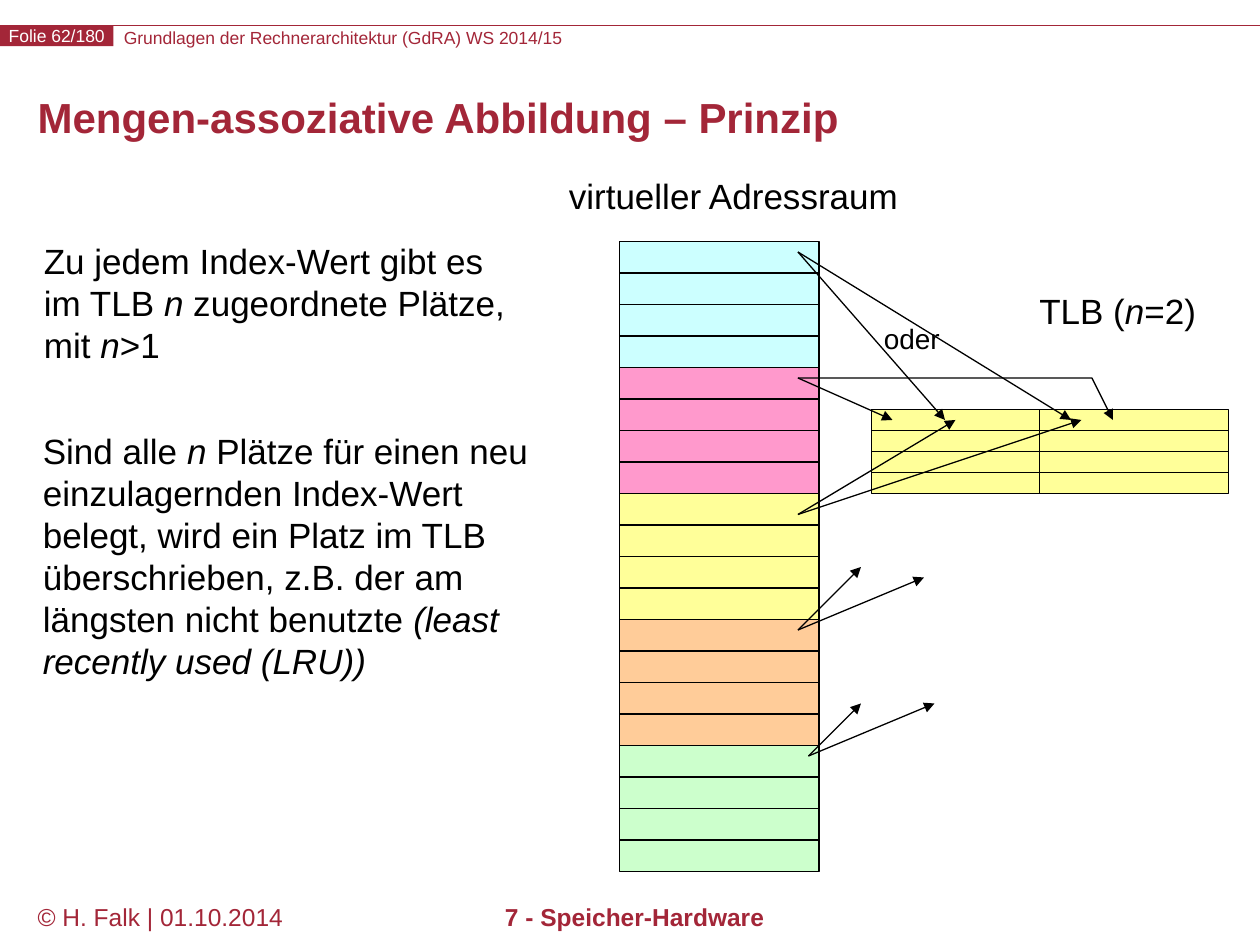
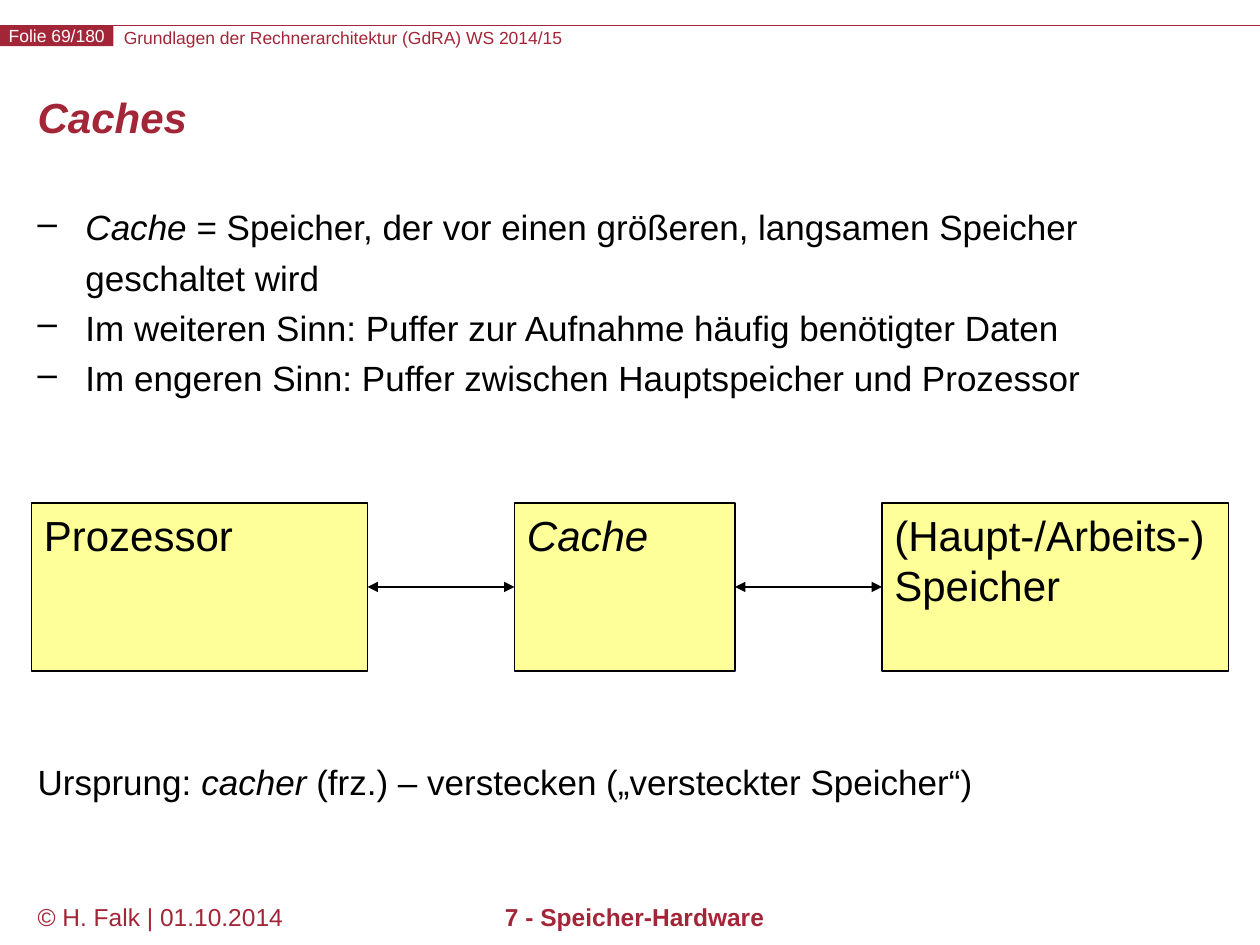
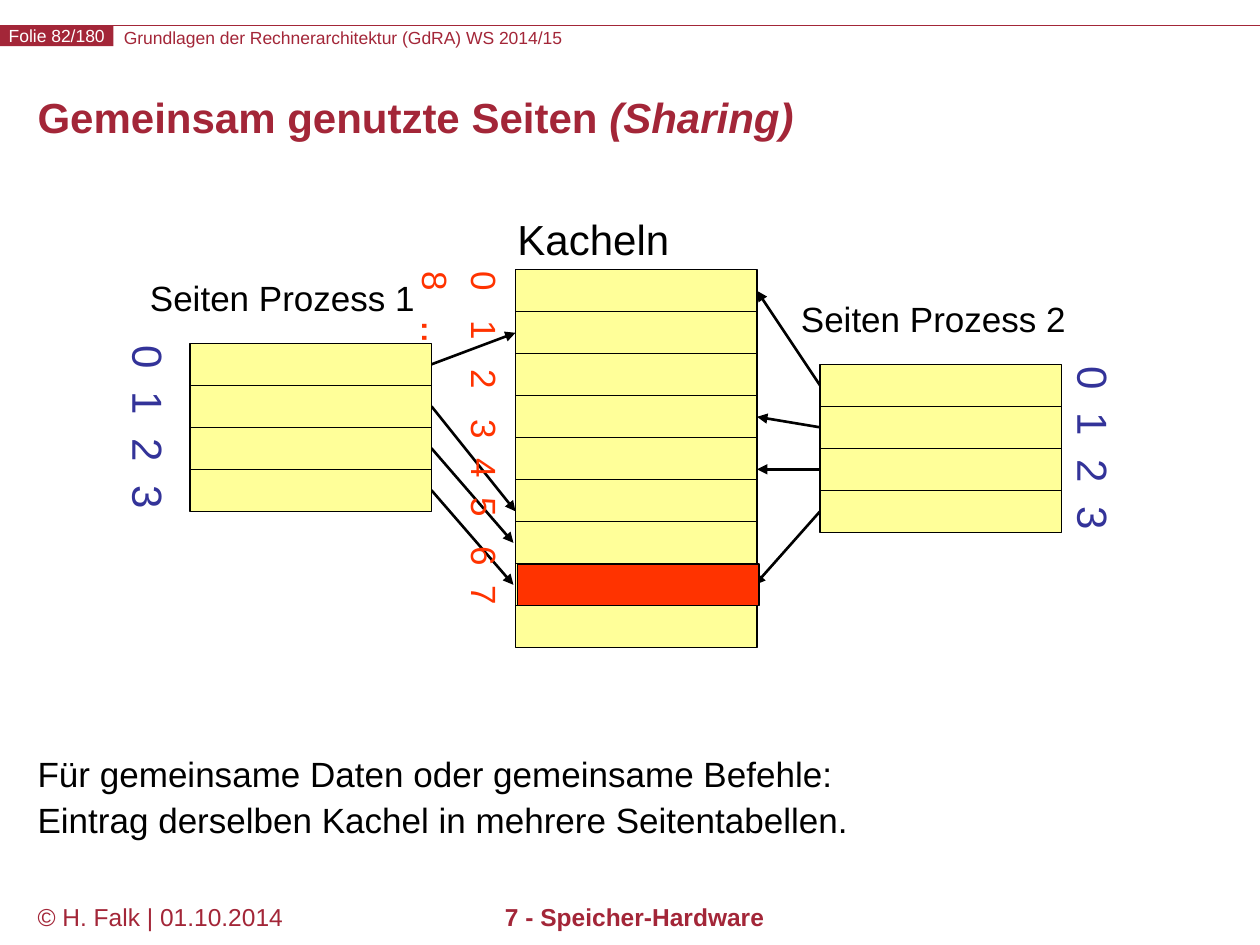
from itertools import accumulate

from lxml import etree
from pptx import Presentation
from pptx.dml.color import RGBColor
from pptx.enum.shapes import MSO_CONNECTOR, MSO_SHAPE
from pptx.enum.text import MSO_ANCHOR, PP_ALIGN
from pptx.oxml.ns import qn
from pptx.util import Inches, Pt

RECTANGLE = MSO_SHAPE.RECTANGLE
STRAIGHT = MSO_CONNECTOR.STRAIGHT
LEFT, CENTER = PP_ALIGN.LEFT, PP_ALIGN.CENTER
TOP, MIDDLE = MSO_ANCHOR.TOP, MSO_ANCHOR.MIDDLE
LEFT_SIDE, RIGHT_SIDE = 1, 3

FONT = "Arial"
COLUMNS, ROWS = 120, 90
UNIT = Inches(10) / COLUMNS
COLORS = {
    "accent": "A32638",
    "white": "FFFFFF",
    "black": "000000",
    "cyan": "CCFFFF",
    "pink": "FF99CC",
    "yellow": "FFFF99",
    "orange": "FFCC99",
    "green": "CCFFCC",
    "red": "FF3300",
    "blue": "333399",
}


def grid(*lengths):
    return [round(length * UNIT) for length in lengths]


def rgb(color):
    return RGBColor.from_string(COLORS[color])


def write_run(paragraph, text, size, color, bold=False, italic=False):
    run = paragraph.add_run()
    run.text = text
    font = run.font
    font.name, font.size, font.bold, font.italic = FONT, Pt(size), bold, italic
    font.color.rgb = rgb(color)


def write(frame, text, size, color="black", bold=False, align=LEFT,
          anchor=TOP, spacing=None, bullet=None, tabs=(), inset=True):
    frame.word_wrap = True
    frame.vertical_anchor = anchor
    if not inset:
        frame.margin_left = frame.margin_right = 0
        frame.margin_top = frame.margin_bottom = 0
    for number, line in enumerate(text.split("\n")):
        paragraph = frame.add_paragraph() if number else frame.paragraphs[0]
        paragraph.alignment = align
        properties = paragraph._p.get_or_add_pPr()
        if bullet:
            properties.set("marL", str(Inches(0.38)))
            properties.set("indent", str(-Inches(0.38)))
            etree.SubElement(properties, qn("a:buChar")).set("char", bullet)
        if tabs:
            stops = etree.SubElement(properties, qn("a:tabLst"))
            for position in tabs:
                stop = etree.SubElement(stops, qn("a:tab"))
                stop.set("pos", str(Inches(position)))
                stop.set("algn", "l")
        if spacing:
            paragraph.line_spacing = spacing
        for part, piece in enumerate(line.split("_")):
            if piece:
                write_run(paragraph, piece, size, color, bold, part % 2 == 1)
    return frame


def label(slide, area, text, size=20, rotation=0, **style):
    box = slide.shapes.add_textbox(*grid(*area))
    box.rotation = rotation
    return write(box.text_frame, text, size, **style)


def rectangle(slide, area, fill, outline="black"):
    block = slide.shapes.add_shape(RECTANGLE, *grid(*area))
    block.shadow.inherit = False
    block.fill.solid()
    block.fill.fore_color.rgb = rgb(fill)
    if outline:
        block.line.color.rgb = rgb(outline)
        block.line.width = Pt(0.75)
    else:
        block.line.fill.background()
    return block


def add_heads(shape, *ends):
    outline = shape.line._get_or_add_ln()
    for end in ends:
        etree.SubElement(outline, qn(f"a:{end}")).set("type", "triangle")


def line(slide, start, end, width=0.75, color="black", heads=()):
    stroke = slide.shapes.add_connector(STRAIGHT, *grid(*start, *end))
    stroke.line.color.rgb = rgb(color)
    stroke.line.width = Pt(width)
    add_heads(stroke, *heads)
    etree.SubElement(stroke._element.spPr, qn("a:effectLst"))
    return stroke


def arrow(slide, start, end, width=0.75):
    return line(slide, start, end, width, heads=("tailEnd",))


def bent_arrow(slide, start, *points):
    builder = slide.shapes.build_freeform(*grid(*start))
    builder.add_line_segments([grid(*point) for point in points], close=False)
    bend = builder.convert_to_shape()
    bend.shadow.inherit = False
    bend.fill.background()
    bend.line.color.rgb = rgb("black")
    bend.line.width = Pt(0.75)
    add_heads(bend, "tailEnd")


def memory(slide, left, top, width, cells, cell_height, fill="yellow"):
    rectangle(slide, (left, top, width, cells * cell_height), fill)
    for cell in range(1, cells):
        level = top + cell * cell_height
        line(slide, (left, level), (left + width, level))


def start_slide(deck, number, title):
    slide = deck.slides.add_slide(deck.slide_layouts[6])
    line(slide, (0, 2.4), (COLUMNS, 2.4), color="accent")
    label(slide, (11.8, 2.6, 79, 2), "Grundlagen der Rechnerarchitektur (GdRA) WS 2014/15",
          10, color="accent", inset=False)
    tag = rectangle(slide, (0, 2.4, 10.8, 2), "accent", None)
    write(tag.text_frame, f"Folie {number}/180", 10, "white",
          align=CENTER, anchor=MIDDLE, inset=False)
    label(slide, (2.4, 85.3, 26.4, 4.7), "© H. Falk | 01.10.2014", 14, color="accent")
    label(slide, (24.1, 85.3, 72.7, 4.7), "7 - Speicher-Hardware", 14,
          color="accent", bold=True, align=CENTER)
    label(slide, (2.4, 7.2, 115.3, 8.6), title, 24, color="accent", bold=True,
          anchor=MIDDLE, spacing=Pt(24))
    return slide


def mapping_slide(deck):
    slide = start_slide(deck, 62, "Mengen-assoziative Abbildung – Prinzip")
    label(slide, (97.8, 27, 18.2, 5.2), "TLB (_n_=2)")
    label(slide, (53, 16, 35, 5.2), "virtueller Adressraum")
    memory(slide, 83, 39, 34, 4, 2)
    line(slide, (99, 39), (99, 47))
    for block, fill in enumerate(("cyan", "pink", "yellow", "orange", "green")):
        memory(slide, 59, 23 + 12 * block, 19, 4, 3, fill)
    targets = {
        (76, 24): [(90, 40), (102, 40)],
        (76, 36): [(85, 40)],
        (76, 49): [(91, 40), (103, 40)],
        (76, 60): [(82, 54), (88, 55)],
        (77, 72): [(82, 67), (89, 67)],
    }
    for address, places in targets.items():
        for place in places:
            arrow(slide, address, place)
    bent_arrow(slide, (76, 36), (104, 36), (106, 40))
    label(slide, (83, 30, 12, 4.4), "oder", 16)
    label(slide, (3, 22.2, 48.7, 13.2),
          "Zu jedem Index-Wert gibt es im TLB _n_ zugeordnete Plätze, mit _n_>1")
    label(slide, (2.9, 40.3, 48.7, 25.2),
          "Sind alle _n_ Plätze für einen neu einzulagernden Index-Wert belegt, "
          "wird ein Platz im TLB überschrieben, z.B. der am längsten nicht "
          "benutzte _(least recently used (LRU))_")


def cache_slide(deck):
    slide = start_slide(deck, 69, "_Caches_")
    label(slide, (2.4, 18.2, 115.3, 20),
          "_Cache _= Speicher, der vor einen größeren, langsamen Speicher geschaltet wird\n"
          "Im weiteren Sinn: Puffer zur Aufnahme häufig benötigter Daten\n"
          "Im engeren Sinn: Puffer zwischen Hauptspeicher und Prozessor",
          spacing=1.2, bullet="–")
    stations = []
    for left, width, name in ((3, 32, "Prozessor"), (49, 21, "_Cache_"),
                              (84, 33, "(Haupt-/Arbeits-)\nSpeicher")):
        station = rectangle(slide, (left, 47.9, width, 16), "yellow")
        write(station.text_frame, name, 24)
        stations.append(station)
    for near, far in zip(stations, stations[1:]):
        bus = line(slide, (0, 0), (1, 1), 1.5, heads=("headEnd", "tailEnd"))
        bus.begin_connect(near, RIGHT_SIDE)
        bus.end_connect(far, LEFT_SIDE)
    label(slide, (2.4, 71, 115.3, 6),
          "Ursprung: _cacher_ (frz.) – verstecken („versteckter Speicher“)", spacing=1.2)


def process_pages(slide, left, top, name, name_area, digits_left):
    memory(slide, left, top, 23, 4, 4)
    label(slide, (digits_left, top + 5.5, 19, 6), "0\t1\t2\t3", 24, rotation=90,
          color="blue", tabs=[0.37 * step for step in range(1, 4)])
    label(slide, name_area, name)


def sharing_slide(deck):
    slide = start_slide(deck, 82, "Gemeinsam genutzte Seiten _(Sharing)_")
    label(slide, (2.4, 70.7, 115.3, 10),
          "Für gemeinsame Daten oder gemeinsame Befehle:\n"
          "Eintrag derselben Kachel in mehrere Seitentabellen.", spacing=1.1)
    process_frames = (
        (78.1, 36.7, [(72.1, 27.7), (72.1, 39.7), (72.1, 44.7), (71.9, 55.7)]),
        (41.1, 34.7, [(49.1, 31.7), (49.1, 48.7), (48.9, 51.7), (48.9, 55.7)]),
    )
    for edge, first_page, frames in process_frames:
        for page, target in enumerate(frames):
            arrow(slide, (edge, first_page + 4 * page), target, 1.5)
    memory(slide, 49.1, 25.7, 23, 9, 4)
    label(slide, (48.1, 19.7, 26, 6), "Kacheln", 24)
    frame_gaps = (0.39, 0.39, 0.39, 0.31, 0.31, 0.39, 0.31)
    numbers = label(slide, (24.8, 42.7, 42, 6), "0\t1\t2\t3\t4\t5\t6\t7\n8", rotation=90,
                    color="red", tabs=list(accumulate(frame_gaps)))
    write_run(numbers.paragraphs[1], "\t..", 24, "red")
    process_pages(slide, 78.1, 34.7, "Seiten Prozess 2", (75.1, 27.7, 30, 5.2), 94.7)
    process_pages(slide, 18.1, 32.7, "Seiten Prozess 1", (13.1, 25.7, 30, 5.2), 4.7)
    rectangle(slide, (49.3, 53.7, 23, 4), "red")


def main():
    deck = Presentation()
    deck.slide_width, deck.slide_height = grid(COLUMNS, ROWS)
    mapping_slide(deck)
    cache_slide(deck)
    sharing_slide(deck)
    deck.save("out.pptx")


if __name__ == "__main__":
    main()
